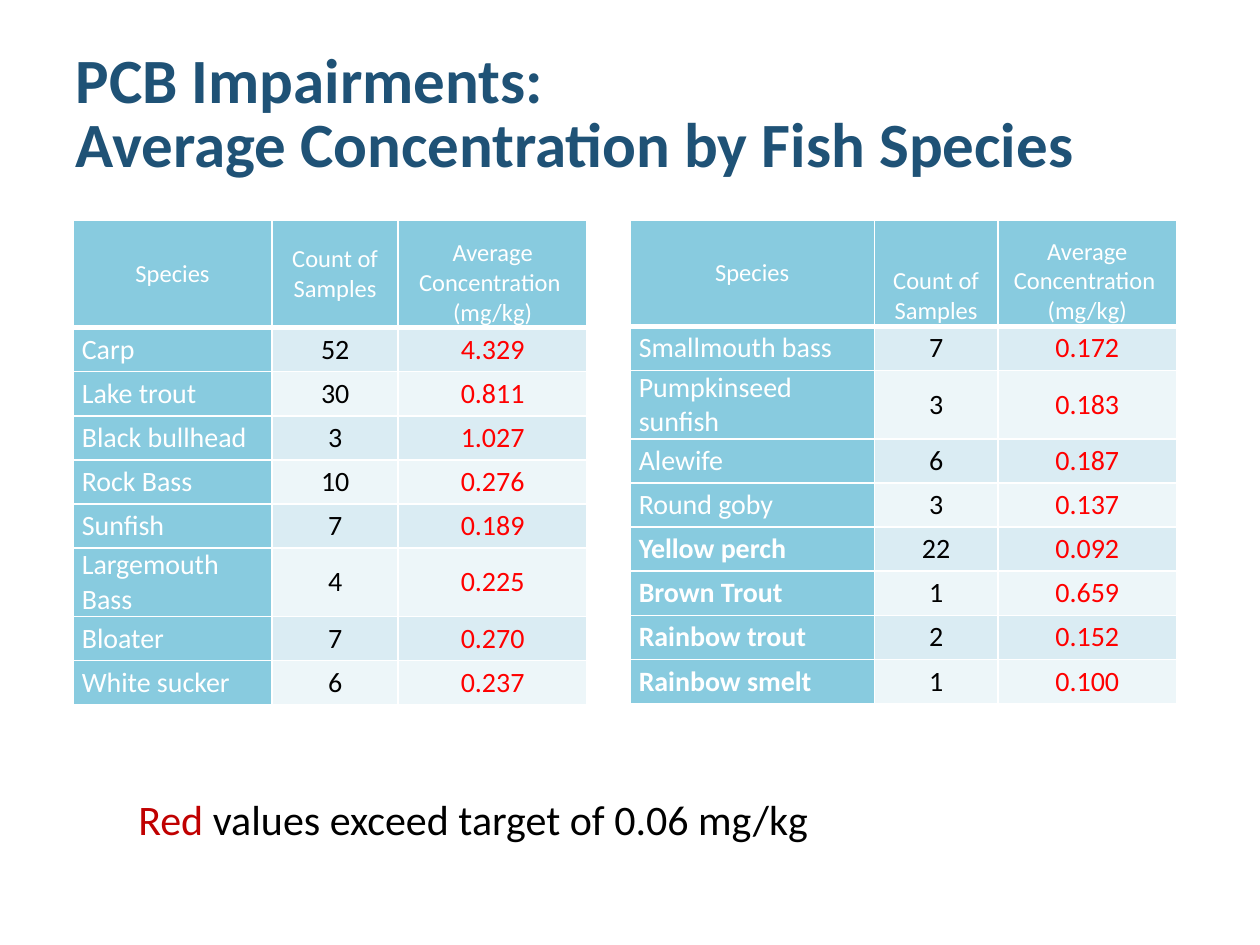
from lxml.etree import SubElement
from pptx import Presentation
from pptx.dml.color import RGBColor
from pptx.enum.text import MSO_ANCHOR, MSO_AUTO_SIZE, PP_ALIGN
from pptx.oxml.ns import qn
from pptx.util import Inches, Pt

NAVY = RGBColor(0x1F, 0x52, 0x76)
TEAL = RGBColor(0x88, 0xCB, 0xDF)
BANDS = [RGBColor(0xDA, 0xEC, 0xF3), RGBColor(0xED, 0xF6, 0xF9)]
WHITE = RGBColor(0xFF, 0xFF, 0xFF)
BLACK = RGBColor(0x00, 0x00, 0x00)
RED = RGBColor(0xFF, 0x00, 0x00)
DARK_RED = RGBColor(0xC0, 0x00, 0x00)

HEADER = ("Species", "Count of Samples", "Average Concentration \v(mg/kg)")
ROW_HEIGHT = 0.35
TABLES = [
    {
        "left": 0.58,
        "columns": [1.58, 1, 1.5],
        "header_height": 0.85,
        "anchors": [MSO_ANCHOR.MIDDLE, MSO_ANCHOR.MIDDLE, MSO_ANCHOR.BOTTOM],
        "bold_species": [],
        "rows": [
            ("Carp", "52", "4.329"),
            ("Lake trout", "30", "0.811"),
            ("Black bullhead", "3", "1.027"),
            ("Rock Bass", "10", "0.276"),
            ("Sunfish", "7", "0.189"),
            ("Largemouth Bass", "4", "0.225"),
            ("Bloater", "7", "0.270"),
            ("White sucker", "6", "0.237"),
        ],
    },
    {
        "left": 5,
        "columns": [1.94, 0.98, 1.42],
        "header_height": 0.84,
        "anchors": [MSO_ANCHOR.MIDDLE, MSO_ANCHOR.BOTTOM, MSO_ANCHOR.BOTTOM],
        "bold_species": ["Yellow perch", "Brown Trout", "Rainbow trout", "Rainbow smelt"],
        "rows": [
            ("Smallmouth bass", "7", "0.172"),
            ("Pumpkinseed sunfish", "3", "0.183"),
            ("Alewife", "6", "0.187"),
            ("Round goby", "3", "0.137"),
            ("Yellow perch", "22", "0.092"),
            ("Brown Trout", "1", "0.659"),
            ("Rainbow trout", "2", "0.152"),
            ("Rainbow smelt", "1", "0.100"),
        ],
    },
]


def format_font(font, size, color, bold=False):
    values = {"name": "Calibri", "size": Pt(size), "bold": bold}
    for name, value in values.items():
        setattr(font, name, value)
    font.color.rgb = color


def add_borders(cell, bottom_width):
    properties = cell._tc.get_or_add_tcPr()
    widths = {"a:lnL": 1, "a:lnR": 1, "a:lnT": 1, "a:lnB": bottom_width}
    for position, (tag, width) in enumerate(widths.items()):
        line = SubElement(properties, qn(tag), w=str(Pt(width)))
        fill = SubElement(line, qn("a:solidFill"))
        SubElement(fill, qn("a:srgbClr"), val=str(WHITE))
        properties.insert(position, line)


presentation = Presentation()
presentation.slide_width = Inches(10)
presentation.slide_height = Inches(7.5)
slide = presentation.slides.add_slide(presentation.slide_layouts[5])

title = slide.shapes.title
title_box = {"left": 0.5, "top": 0.3, "width": 9, "height": 1.25}
for name, value in title_box.items():
    setattr(title, name, Inches(value))
title.text_frame.text = "PCB Impairments: \vAverage Concentration by Fish Species"
title.text_frame.auto_size = MSO_AUTO_SIZE.NONE
title.text_frame.vertical_anchor = MSO_ANCHOR.MIDDLE
paragraph = title.text_frame.paragraphs[0]
paragraph.alignment = PP_ALIGN.LEFT
paragraph.line_spacing = 0.85
for run in paragraph.runs:
    format_font(run.font, 36, NAVY, True)

for data in TABLES:
    rows = [HEADER] + data["rows"]
    height = data["header_height"] + ROW_HEIGHT * len(data["rows"])
    table = slide.shapes.add_table(
        len(rows), len(HEADER), Inches(data["left"]), Inches(1.75),
        Inches(sum(data["columns"])), Inches(height),
    ).table
    for column, width in zip(table.columns, data["columns"]):
        column.width = Inches(width)
    for row_index, row in enumerate(rows):
        is_header = row_index == 0
        table.rows[row_index].height = Inches(data["header_height"] if is_header else ROW_HEIGHT)
        for column_index, text in enumerate(row):
            cell = table.cell(row_index, column_index)
            cell.text = text
            margin = Inches(0.06 if is_header else 0.07)
            cell_format = {
                "margin_left": margin,
                "margin_right": margin,
                "margin_top": 0,
                "margin_bottom": 0,
                "vertical_anchor": data["anchors"][column_index] if is_header else MSO_ANCHOR.MIDDLE,
            }
            for name, value in cell_format.items():
                setattr(cell, name, value)
            cell.fill.solid()
            is_teal = is_header or column_index == 0
            cell.fill.fore_color.rgb = TEAL if is_teal else BANDS[(row_index - 1) % 2]
            add_borders(cell, 3 if is_header else 1)

            paragraph = cell.text_frame.paragraphs[0]
            is_centered = is_header or column_index > 0
            paragraph.alignment = PP_ALIGN.CENTER if is_centered else PP_ALIGN.LEFT
            paragraph.space_before = paragraph.space_after = Pt(2 if is_header else 1)
            color = WHITE if is_header else (WHITE, BLACK, RED)[column_index]
            for run in paragraph.runs:
                format_font(run.font, 14 if is_header else 16, color, text in data["bold_species"])

note = slide.shapes.add_textbox(Inches(1), Inches(6.25), Inches(7.83), Inches(0.51))
note.text_frame.word_wrap = True
note.text_frame.auto_size = MSO_AUTO_SIZE.SHAPE_TO_FIT_TEXT
paragraph = note.text_frame.paragraphs[0]
for text, color in [("Red", DARK_RED), (" values exceed target of 0.06 mg/kg", BLACK)]:
    run = paragraph.add_run()
    run.text = text
    format_font(run.font, 24, color)

presentation.save("out.pptx")
